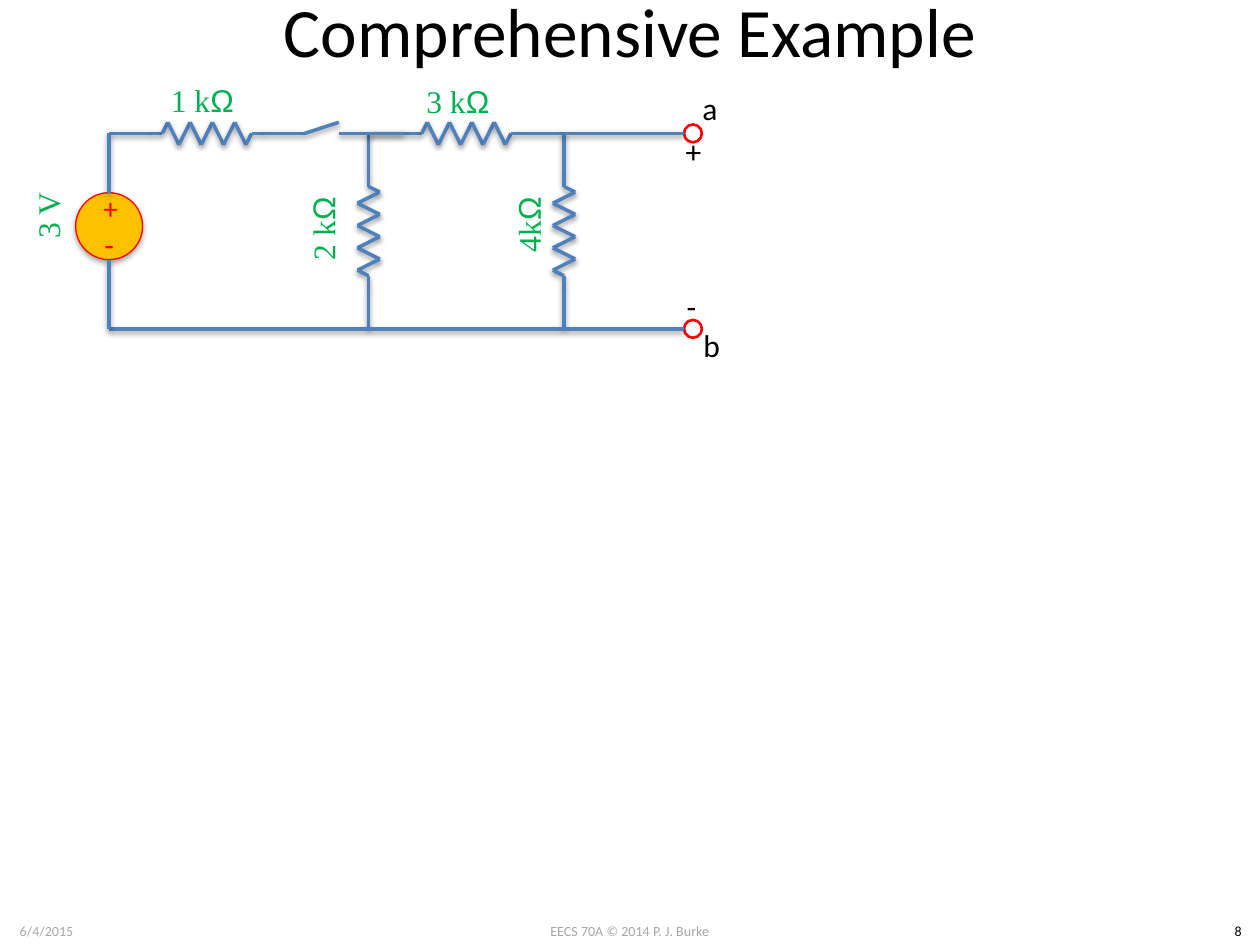
import itertools

import lxml.etree
import pptx
import pptx.dml.color
import pptx.enum.shapes
import pptx.enum.text
import pptx.oxml
import pptx.oxml.ns
import pptx.util
from pptx.util import Cm

BLACK = pptx.dml.color.RGBColor(0x00, 0x00, 0x00)
GREY = pptx.dml.color.RGBColor(0xA6, 0xA6, 0xA6)
BLUE = pptx.dml.color.RGBColor(0x4F, 0x81, 0xBD)
GREEN = pptx.dml.color.RGBColor(0x00, 0xB0, 0x50)
RED = pptx.dml.color.RGBColor(0xFF, 0x00, 0x00)
ORANGE = pptx.dml.color.RGBColor(0xFF, 0xC0, 0x00)

# Circuit dimensions in centimetres
RESISTOR = 3.94
LEAD = 0.84
JOINT = 0.23
PEAKS = 8
AMPLITUDE = 0.225
MIDDLE_NODE = 5.23
RIGHT_NODE = MIDDLE_NODE + RESISTOR
TERMINAL = 11.77
RING = 0.36
SOURCE_CENTER = 1.87
SOURCE_SIZE = 1.35


def add_shadow(shape, opacity, distance):
    effects = pptx.oxml.parse_xml(
        f'<a:effectLst {pptx.oxml.ns.nsdecls("a")}>'
        f'<a:outerShdw blurRad="40000" dist="{distance}" dir="5400000" rotWithShape="0">'
        f'<a:srgbClr val="000000"><a:alpha val="{opacity}000"/></a:srgbClr>'
        '</a:outerShdw></a:effectLst>')
    shape._element.spPr.append(effects)


def add_wire(shapes, start, end):
    wire = shapes.add_connector(pptx.enum.shapes.MSO_CONNECTOR.STRAIGHT,
                                Cm(start[0]), Cm(start[1]), Cm(end[0]), Cm(end[1]))
    wire.line.color.rgb = BLUE
    wire.line.width = pptx.util.Pt(2)
    add_shadow(wire, 38, 20000)


def add_circle(shapes, center, size, line_width):
    circle = shapes.add_shape(pptx.enum.shapes.MSO_SHAPE.OVAL,
                              Cm(center[0] - size / 2), Cm(center[1] - size / 2),
                              Cm(size), Cm(size))
    circle.shadow.inherit = False
    circle.fill.background()
    circle.line.color.rgb = RED
    circle.line.width = pptx.util.Pt(line_width)
    return circle


def add_label(shapes, center, runs, color, size=18, box=(0.8, 1.02), rotation=0, wrap=False):
    """Centre a text box on a point; runs are (text, font) pairs."""
    label = shapes.add_textbox(Cm(center[0] - box[0] / 2), Cm(center[1] - box[1] / 2),
                               Cm(box[0]), Cm(box[1]))
    label.rotation = rotation
    frame = label.text_frame
    frame.word_wrap = wrap
    frame.vertical_anchor = pptx.enum.text.MSO_ANCHOR.MIDDLE
    paragraph = frame.paragraphs[0]
    paragraph.alignment = pptx.enum.text.PP_ALIGN.CENTER
    for text, font in runs:
        run = paragraph.add_run()
        run.text = text
        run.font.name = font
        run.font.size = pptx.util.Pt(size)
        run.font.color.rgb = color


def add_value(shapes, center, number, unit="", rotation=0):
    runs = [(number, "Times New Roman")]
    if unit:
        runs.append((unit, "Arial"))
    add_label(shapes, center, runs, GREEN, box=(3.02, 1.85), rotation=rotation, wrap=True)


def add_resistor(slide, left, top, vertical=False):
    """Draw leads and zigzag from the given end, rightwards or downwards."""
    group = slide.shapes.add_group_shape()
    body_start = LEAD + JOINT
    step = (RESISTOR - 2 * body_start) / PEAKS
    points = [(0, 0), (LEAD, 0), (body_start, 0)]
    points += [(body_start + (peak + 0.5) * step, AMPLITUDE * (-1) ** (peak + 1))
               for peak in range(PEAKS)]
    points += [(RESISTOR - body_start, 0), (RESISTOR - LEAD, 0), (RESISTOR, 0)]
    if vertical:
        points = [(left - across, top + along) for along, across in points]
    else:
        points = [(left + along, top + across) for along, across in points]
    for start, end in itertools.pairwise(points):
        add_wire(group.shapes, start, end)


def add_source(slide, left, top):
    shapes = slide.shapes.add_group_shape().shapes
    center = top + SOURCE_CENTER
    circle = add_circle(shapes, (left, center), SOURCE_SIZE, 0.75)
    circle.fill.solid()
    circle.fill.fore_color.rgb = ORANGE
    circle._element.spPr.remove(circle._element.spPr.find(pptx.oxml.ns.qn("a:effectLst")))
    add_shadow(circle, 35, 23000)
    add_label(shapes, (left + 0.03, center - 0.36), [("+", "Calibri")], RED, size=16.6)
    add_label(shapes, (left, center + 0.36), [("-", "Calibri")], RED)
    add_wire(shapes, (left, top + RESISTOR), (left, center + SOURCE_SIZE / 2))
    add_wire(shapes, (left, center - SOURCE_SIZE / 2), (left, top))
    add_value(shapes, (left - 1.24, top + 1.66), "3 V", rotation=270)


def add_terminals(slide, left, top):
    bottom = top + RESISTOR
    for y in (top, bottom):
        add_circle(slide.shapes, (left, y), RING, 1.5)
    for text, x, y in (("a", left + 0.34, top - 0.51), ("b", left + 0.36, bottom + 0.33),
                       ("+", left, top + 0.36), ("-", left - 0.03, bottom - 0.46)):
        add_label(slide.shapes, (x, y), [(text, "Calibri")], BLACK)


def add_circuit(slide, left, top):
    bottom = top + RESISTOR
    middle, right = left + MIDDLE_NODE, left + RIGHT_NODE
    ring_edge = left + TERMINAL - RING / 2

    # Resistors and their values
    add_resistor(slide, middle, top, vertical=True)
    add_resistor(slide, middle, top)
    add_resistor(slide, right, top, vertical=True)
    add_resistor(slide, left, top)
    for number, x, y, rotation in (("1 k", 1.88, -0.67, 0), ("3 k", 7.03, -0.65, 0),
                                   ("2 k", 4.31, 1.92, 270), ("4k", 8.45, 1.84, 270)):
        add_value(slide.shapes, (left + x, top + y), number, "Ω", rotation)

    # Terminals, rails and source
    add_terminals(slide, left + TERMINAL, top)
    add_wire(slide.shapes, (right, top), (ring_edge, top))
    add_wire(slide.shapes, (left, bottom), (ring_edge, bottom))
    add_source(slide, left, top)

    # Open switch
    switch, contact = left + RESISTOR, left + 4.63
    add_wire(slide.shapes, (contact, top), (contact + 1.32, top))
    add_wire(slide.shapes, (switch, top), (contact, top - AMPLITUDE))


def add_title(slide, left, top, width, height):
    title = slide.shapes.title
    title.left, title.top, title.width, title.height = map(Cm, (left, top, width, height))
    frame = title.text_frame
    frame.auto_size = pptx.enum.text.MSO_AUTO_SIZE.NONE
    frame.vertical_anchor = pptx.enum.text.MSO_ANCHOR.MIDDLE
    paragraph = frame.paragraphs[0]
    paragraph.alignment = pptx.enum.text.PP_ALIGN.CENTER
    run = paragraph.add_run()
    run.text = "Comprehensive Example"
    run.font.name = "Calibri"
    run.font.size = pptx.util.Pt(39.6)
    run.font.color.rgb = BLACK


def add_footer(slide, middle):
    for text, x, width, color in (("EECS 70A © 2014 P. J. Burke", 12.7, 5.92, GREY),
                                  ("6/4/2015", 0.94, 1.88, GREY),
                                  ("8", 24.96, 0.89, BLACK)):
        add_label(slide.shapes, (x, middle), [(text, "Calibri")], color,
                  size=8, box=(width, 0.61))


def main():
    presentation = pptx.Presentation()
    presentation.slide_width, presentation.slide_height = Cm(25.4), Cm(19.05)
    slide = presentation.slides.add_slide(presentation.slide_layouts[5])
    add_footer(slide, 18.76)
    add_title(slide, 1.27, -0.43, 22.86, 2.08)
    add_circuit(slide, 2.2, 2.69)
    presentation.save("out.pptx")


if __name__ == "__main__":
    main()
